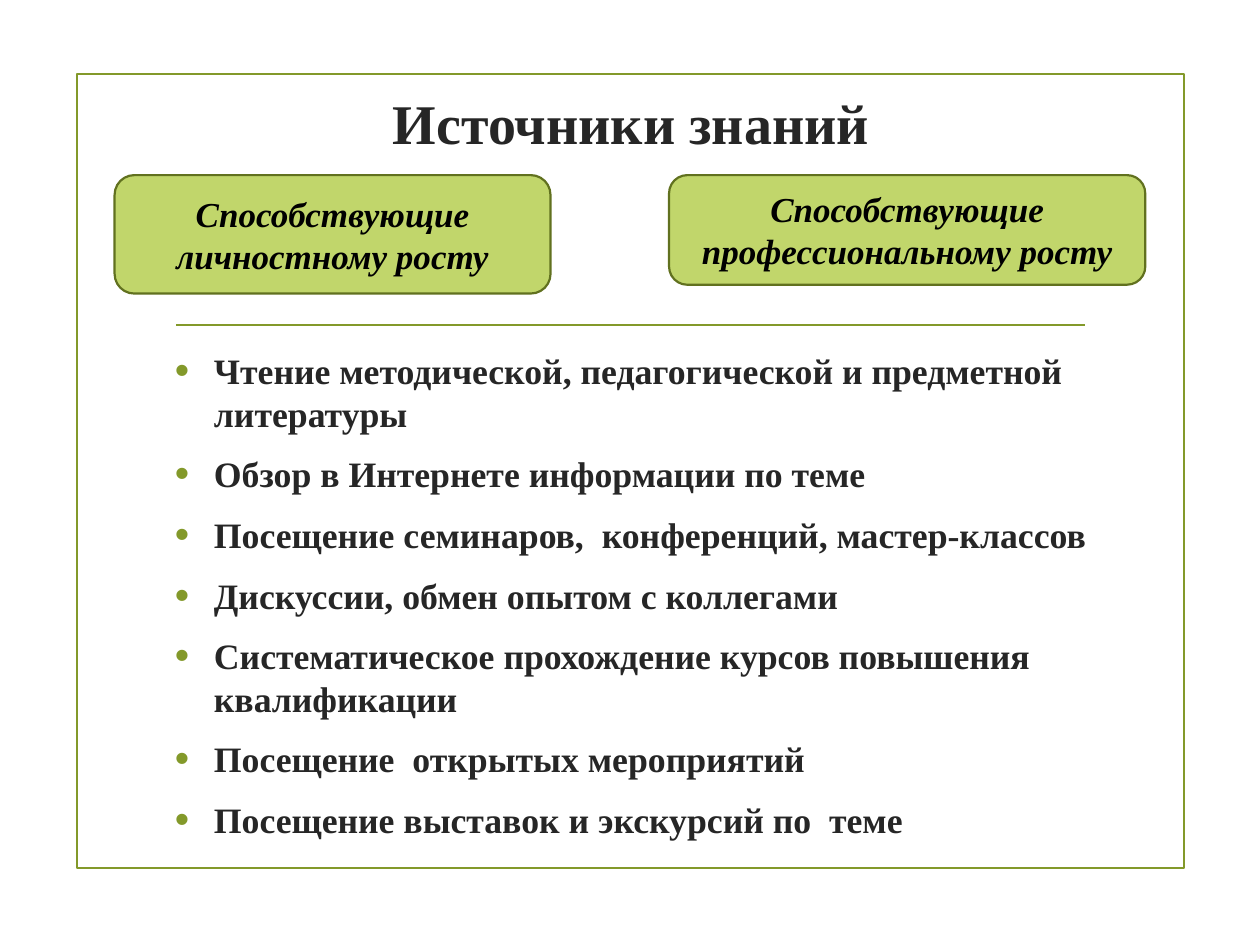
"""Build a slide on sources of knowledge for personal and professional growth."""
from lxml.etree import SubElement
from pptx import Presentation
from pptx.dml.color import RGBColor
from pptx.enum.shapes import MSO_CONNECTOR, MSO_SHAPE
from pptx.enum.text import MSO_ANCHOR, PP_ALIGN
from pptx.oxml.ns import qn
from pptx.util import Inches, Pt

TITLE = "Источники знаний"
GOALS = [
    ("Способствующие личностному росту", (0.91, 1.39, 3.46, 0.94)),
    ("Способствующие профессиональному росту", (5.31, 1.39, 3.78, 0.87)),
]
SOURCES = [
    "Чтение методической, педагогической и предметной литературы",
    "Обзор в Интернете информации по теме",
    "Посещение семинаров,  конференций, мастер-классов",
    "Дискуссии, обмен опытом с коллегами",
    "Систематическое прохождение курсов повышения квалификации",
    "Посещение  открытых мероприятий",
    "Посещение выставок и экскурсий по  теме",
]
FONT = "Times New Roman"
BODY = 20.4
INDENT = 0.31
OLIVE = RGBColor(0x83, 0x99, 0x2A)
MOSS = RGBColor(0x61, 0x71, 0x1F)
LIME = RGBColor(0xC1, 0xD6, 0x6B)
INK = RGBColor(0x26, 0x26, 0x26)
BLACK = RGBColor(0, 0, 0)


def write(para, text, size, color, italic=False):
    run = para.add_run()
    run.text = text
    font = run.font
    font.name, font.size = FONT, Pt(size)
    font.bold, font.italic = True, italic
    font.color.rgb = color


def panel(slide, kind, box, edge, fill=None):
    shape = slide.shapes.add_shape(kind, *map(Inches, box))
    shape.shadow.inherit = False
    if fill is None:
        shape.fill.background()
    else:
        shape.fill.solid()
        shape.fill.fore_color.rgb = fill
    shape.line.color.rgb = edge
    shape.line.width = Pt(1.25)
    return shape


def rule(slide, left, right, top):
    line = slide.shapes.add_connector(
        MSO_CONNECTOR.STRAIGHT, *map(Inches, (left, top, right, top)))
    line.line.color.rgb = OLIVE
    line.line.width = Pt(1.25)
    SubElement(line._element.spPr, qn("a:effectLst"))


def center(frame, text, size, color, italic=False):
    frame.word_wrap = True
    frame.vertical_anchor = MSO_ANCHOR.MIDDLE
    para = frame.paragraphs[0]
    para.alignment = PP_ALIGN.CENTER
    write(para, text, size, color, italic)


def bullet(para):
    props = para._p.get_or_add_pPr()
    props.set("marL", str(Inches(INDENT)))
    props.set("indent", str(-Inches(INDENT)))
    tint = SubElement(props, qn("a:buClr"))
    SubElement(tint, qn("a:srgbClr"), val=str(OLIVE))
    SubElement(props, qn("a:buSzPct"), val="115000")
    SubElement(props, qn("a:buFont"), typeface="Arial")
    SubElement(props, qn("a:buChar"), char="•")


def main():
    deck = Presentation()
    deck.slide_width, deck.slide_height = Inches(10), Inches(7.5)
    slide = deck.slides.add_slide(deck.slide_layouts[6])

    panel(slide, MSO_SHAPE.RECTANGLE, (0.61, 0.59, 8.79, 6.3), OLIVE)
    rule(slide, 1.4, 8.61, 2.58)

    title = slide.shapes.add_textbox(*map(Inches, (1.29, 0.62, 7.44, 0.7)))
    center(title.text_frame, TITLE, 32, INK)

    body = slide.shapes.add_textbox(*map(Inches, (1.29, 2.72, 7.44, 3.77)))
    frame = body.text_frame
    frame.word_wrap = True
    frame.margin_right = Inches(0.05)
    for i, text in enumerate(SOURCES):
        para = frame.add_paragraph() if i else frame.paragraphs[0]
        para.space_before = Pt(BODY * 0.2 if i else 0)
        para.space_after = Pt(6)
        bullet(para)
        write(para, text, BODY, INK)

    for text, box in GOALS:
        goal = panel(slide, MSO_SHAPE.ROUNDED_RECTANGLE, box, MOSS, LIME)
        center(goal.text_frame, text, 20, BLACK, italic=True)

    deck.save("out.pptx")


if __name__ == "__main__":
    main()
